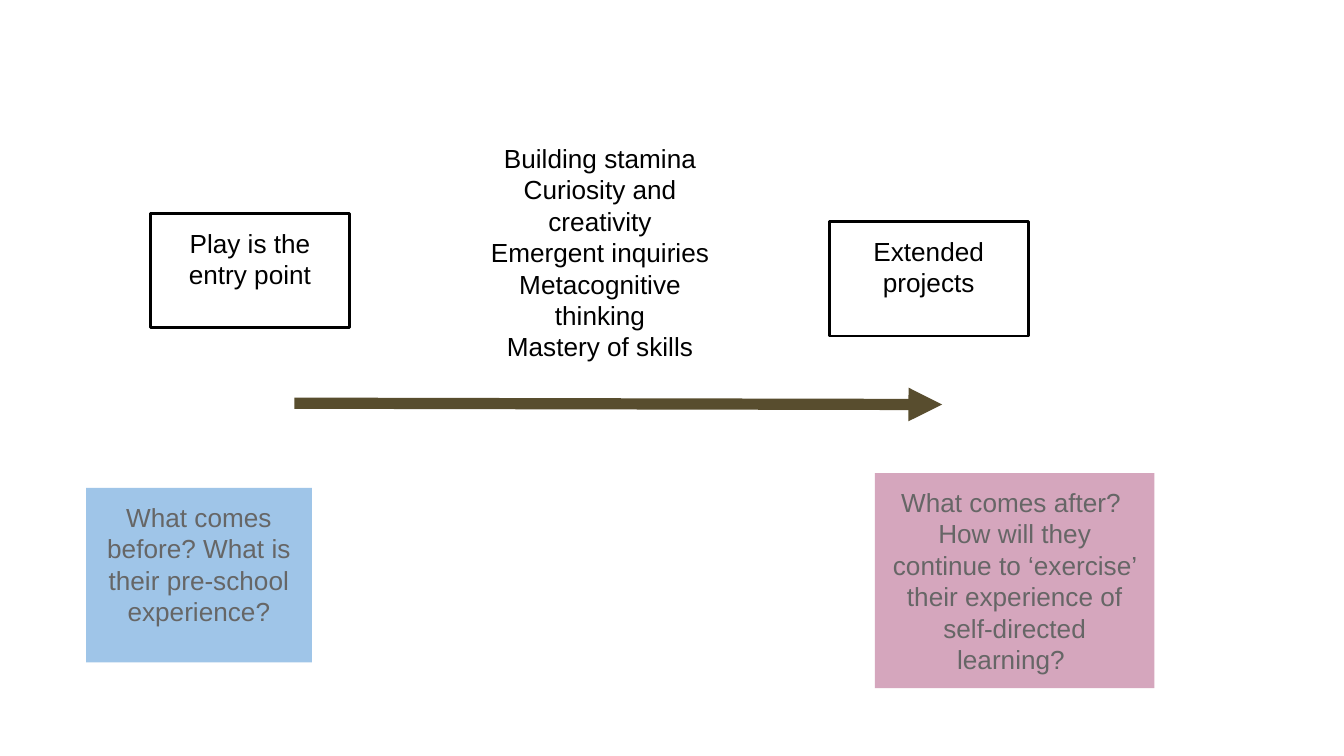
from dataclasses import dataclass
from typing import Optional

import lxml.etree
import pptx
import pptx.dml.color
import pptx.enum.shapes
import pptx.enum.text
import pptx.oxml.ns
import pptx.util

Inches = pptx.util.Inches
Pt = pptx.util.Pt


def rgb(code: str) -> pptx.dml.color.RGBColor:
    return pptx.dml.color.RGBColor.from_string(code)


@dataclass(frozen=True)
class Theme:
    font: str = "Arial"
    text_size: float = 14
    outline_width: float = 1.5
    arrow_width: float = 6
    inset: float = 0.1
    ink: str = "000000"
    muted: str = "666666"
    white: str = "FFFFFF"
    blue: str = "9FC5E8"
    pink: str = "D5A6BD"
    arrow: str = "584D2E"


THEME = Theme()


@dataclass(frozen=True)
class TextPanel:
    left: float
    top: float
    width: float
    height: float
    lines: tuple[str, ...]
    text_color: str = THEME.ink
    fill: Optional[str] = None
    outline: Optional[str] = None


STAGES = [
    TextPanel(left, top, 1.48, 0.85, (label,), fill=THEME.white, outline=THEME.ink)
    for left, top, label in (
        (1.12, 1.59, "Play is the entry point"),
        (6.17, 1.65, "Extended projects"),
    )
]
QUESTIONS = [
    TextPanel(
        0.64, 3.63, 1.68, 1.3,
        ("What comes before? What is their pre-school experience?",),
        THEME.muted, THEME.blue,
    ),
    TextPanel(
        6.51, 3.52, 2.08, 1.6,
        (
            "What comes after? ",
            "How will they continue to ‘exercise’ their experience of "
            "self-directed learning? ",
        ),
        THEME.muted, THEME.pink,
    ),
]
SKILLS = TextPanel(
    3.51, 0.96, 1.91, 1.93,
    (
        "Building stamina",
        "Curiosity and creativity",
        "Emergent inquiries",
        "Metacognitive thinking",
        "Mastery of skills",
    ),
)


def write_text(box, panel: TextPanel) -> None:
    frame = box.text_frame
    frame.word_wrap = True
    frame.vertical_anchor = pptx.enum.text.MSO_ANCHOR.TOP
    frame.margin_left = frame.margin_right = Inches(THEME.inset)
    frame.margin_top = frame.margin_bottom = Inches(THEME.inset)
    frame.text = "\n".join(panel.lines)
    for paragraph in frame.paragraphs:
        paragraph.alignment = pptx.enum.text.PP_ALIGN.CENTER
        paragraph.font.name = THEME.font
        paragraph.font.size = Pt(THEME.text_size)
        paragraph.font.color.rgb = rgb(panel.text_color)


def draw_panel(slide, panel: TextPanel) -> None:
    bounds = [Inches(v) for v in (panel.left, panel.top, panel.width, panel.height)]
    if panel.fill is None:
        box = slide.shapes.add_textbox(*bounds)
    else:
        box = slide.shapes.add_shape(pptx.enum.shapes.MSO_SHAPE.RECTANGLE, *bounds)
        box.shadow.inherit = False
        box.fill.solid()
        box.fill.fore_color.rgb = rgb(panel.fill)
        if panel.outline is None:
            box.line.fill.background()
        else:
            box.line.color.rgb = rgb(panel.outline)
            box.line.width = Pt(THEME.outline_width)
    write_text(box, panel)


def draw_arrow(slide, start: tuple[float, float], end: tuple[float, float]) -> None:
    arrow = slide.shapes.add_connector(
        pptx.enum.shapes.MSO_CONNECTOR.STRAIGHT,
        *(Inches(v) for v in start + end),
    )
    arrow.line.color.rgb = rgb(THEME.arrow)
    arrow.line.width = Pt(THEME.arrow_width)
    qn = pptx.oxml.ns.qn
    line = arrow._element.spPr.find(qn("a:ln"))
    lxml.etree.SubElement(line, qn("a:tailEnd"), type="triangle")
    lxml.etree.SubElement(arrow._element.spPr, qn("a:effectLst"))


def main() -> None:
    deck = pptx.Presentation()
    deck.slide_width = Inches(10)
    deck.slide_height = deck.slide_width * 9 // 16
    slide = deck.slides.add_slide(deck.slide_layouts[6])
    draw_arrow(slide, (2.19, 3), (7.01, 3.01))
    for panel in [*STAGES, *QUESTIONS, SKILLS]:
        draw_panel(slide, panel)
    deck.save("out.pptx")


if __name__ == "__main__":
    main()
